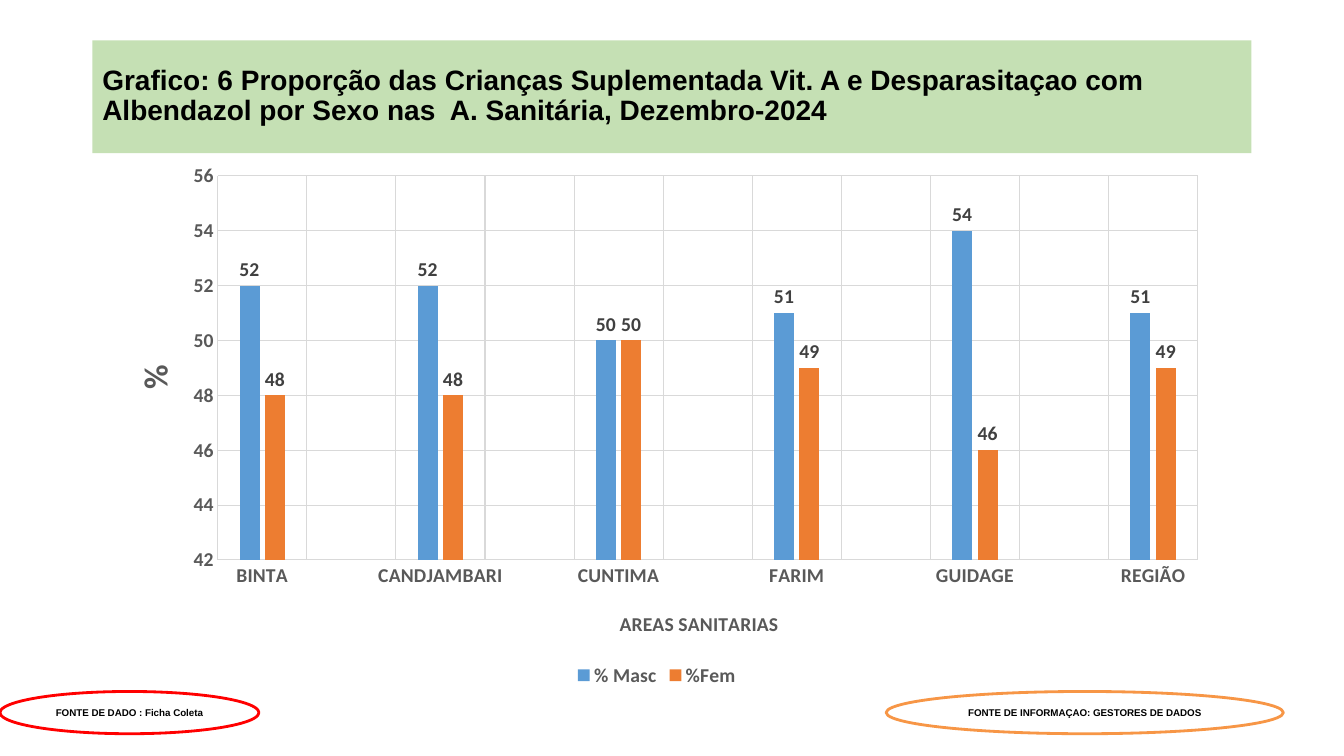
from lxml.etree import SubElement
from pptx import Presentation
from pptx.chart.data import CategoryChartData
from pptx.dml.color import RGBColor
from pptx.enum.chart import XL_CHART_TYPE, XL_LABEL_POSITION, XL_LEGEND_POSITION, XL_TICK_MARK
from pptx.enum.shapes import MSO_SHAPE
from pptx.enum.text import MSO_ANCHOR, PP_ALIGN
from pptx.oxml import parse_xml
from pptx.oxml.ns import nsdecls, qn
from pptx.util import Pt

COLORS = {
    "banner": "C5E0B4", "black": "000000", "white": "FFFFFF",
    "axis": "595959", "label": "404040", "grid": "D9D9D9",
    "male": "5B9BD5", "female": "ED7D31", "red": "FF0000", "orange": "F79646",
}
AREAS = ["BINTA", "CANDJAMBARI", "CUNTIMA", "FARIM", "GUIDAGE", "REGIÃO"]
SERIES = [
    ("% Masc", "male", [52, 52, 50, 51, 54, 51]),
    ("%Fem", "female", [48, 48, 50, 49, 46, 49]),
]


def spaced(items, gap):
    """Put a gap between neighbouring items, so the groups stand apart."""
    return [entry for item in items for entry in (item, gap)][:-1]


class SlideBuilder:
    def __init__(self, slide):
        self.slide = slide

    def color(self, name):
        return RGBColor.from_string(COLORS[name])

    def style_font(self, font, size, color, name="Calibri"):
        font.name = name
        font.size = Pt(size)
        font.bold = True
        font.color.rgb = self.color(color)

    def text_shape(self, kind, box, text, size, align, fill=None, line=None):
        shape = self.slide.shapes.add_shape(kind, *map(Pt, box))
        shape.shadow.inherit = False
        if fill:
            shape.fill.solid()
            shape.fill.fore_color.rgb = self.color(fill)
        else:
            shape.fill.background()
        if line:
            shape.line.color.rgb = self.color(line)
            shape.line.width = Pt(2)
        else:
            shape.line.fill.background()
        frame = shape.text_frame
        frame.word_wrap = True
        frame.vertical_anchor = MSO_ANCHOR.MIDDLE
        frame.text = text
        paragraph = frame.paragraphs[0]
        paragraph.alignment = align
        self.style_font(paragraph.runs[0].font, size, "black", "Arial")
        return shape

    def place(self, parent, index, box, chart_size, inner=False):
        """Fix a chart part at a box (left, top[, width, height]) in points."""
        for old in parent.findall(qn("c:layout")):
            parent.remove(old)
        layout = parse_xml(f"<c:layout {nsdecls('c')}><c:manualLayout/></c:layout>")
        manual = layout[0]
        if inner:
            SubElement(manual, qn("c:layoutTarget")).set("val", "inner")
        for tag in ("xMode", "yMode"):
            SubElement(manual, qn(f"c:{tag}")).set("val", "edge")
        for tag, length, whole in zip("xywh", box, chart_size * 2):
            SubElement(manual, qn(f"c:{tag}")).set("val", str(round(length / whole, 4)))
        parent.insert(index, layout)

    def style_axis(self, axis, title, size, title_position, chart_size):
        axis.major_tick_mark = axis.minor_tick_mark = XL_TICK_MARK.NONE
        self.style_font(axis.tick_labels.font, 14, "axis")
        axis.has_major_gridlines = True
        axis.major_gridlines.format.line.color.rgb = self.color("grid")
        axis.major_gridlines.format.line.width = Pt(0.75)
        axis_title = axis.axis_title
        axis_title.text_frame.text = title
        run = axis_title.text_frame.paragraphs[0].runs[0]
        self.style_font(run.font, size, "axis")
        self.place(axis_title._element, 1, title_position, chart_size)

    def column_chart(self, box, areas, series_list):
        data = CategoryChartData()
        data.categories = spaced(areas, "")
        for name, _, values in series_list:
            data.add_series(name, spaced(values, None))
        chart = self.slide.shapes.add_chart(
            XL_CHART_TYPE.COLUMN_CLUSTERED, *map(Pt, box), data).chart
        chart_size = box[2:]
        chart.has_title = False
        self.style_font(chart.font, 14, "black")

        plot = chart.plots[0]
        plot.gap_width = 219
        plot.overlap = -27
        plot.vary_by_categories = False
        for series, (_, color, _) in zip(plot.series, series_list):
            series.format.fill.solid()
            series.format.fill.fore_color.rgb = self.color(color)
            labels = series.data_labels
            labels.show_value = True
            labels.position = XL_LABEL_POSITION.OUTSIDE_END
            self.style_font(labels.font, 14, "label")

        categories, values = chart.category_axis, chart.value_axis
        self.style_axis(categories, "AREAS SANITARIAS", 14, (374, 324), chart_size)
        self.style_axis(values, "%", 24, (24, 147), chart_size)
        categories.format.line.color.rgb = self.color("grid")
        categories.format.line.width = Pt(0.75)
        values.format.line.fill.background()
        values.minimum_scale, values.maximum_scale, values.major_unit = 42, 56, 2

        chart.has_legend = True
        chart.legend.position = XL_LEGEND_POSITION.BOTTOM
        chart.legend.include_in_layout = False
        self.style_font(chart.legend.font, 14, "axis")
        plot_area = chart._chartSpace.chart.plotArea
        self.place(plot_area, 0, (89.5, 16.2, 700, 274.5), chart_size, inner=True)


def main():
    presentation = Presentation()
    presentation.slide_width, presentation.slide_height = Pt(960), Pt(540)
    builder = SlideBuilder(presentation.slides.add_slide(presentation.slide_layouts[6]))

    banner = builder.text_shape(
        MSO_SHAPE.RECTANGLE, (66, 28.8, 828, 80.6),
        "Grafico: 6 Proporção das Crianças Suplementada Vit. A e Desparasitaçao com "
        "Albendazol por Sexo nas  A. Sanitária, Dezembro-2024",
        20, PP_ALIGN.LEFT, fill="banner")
    banner.text_frame.paragraphs[0].line_spacing = 0.9

    builder.column_chart((66, 109.4, 806.4, 384.5), AREAS, SERIES)

    for left, width, text, fill, line in (
        (0, 185, "FONTE DE DADO : Ficha Coleta", None, "red"),
        (633, 283.7, "FONTE DE INFORMAÇAO: GESTORES DE DADOS", "white", "orange"),
    ):
        builder.text_shape(MSO_SHAPE.OVAL, (left, 493.9, width, 30.2), text, 7,
                           PP_ALIGN.CENTER, fill, line)

    presentation.save("out.pptx")


if __name__ == "__main__":
    main()
